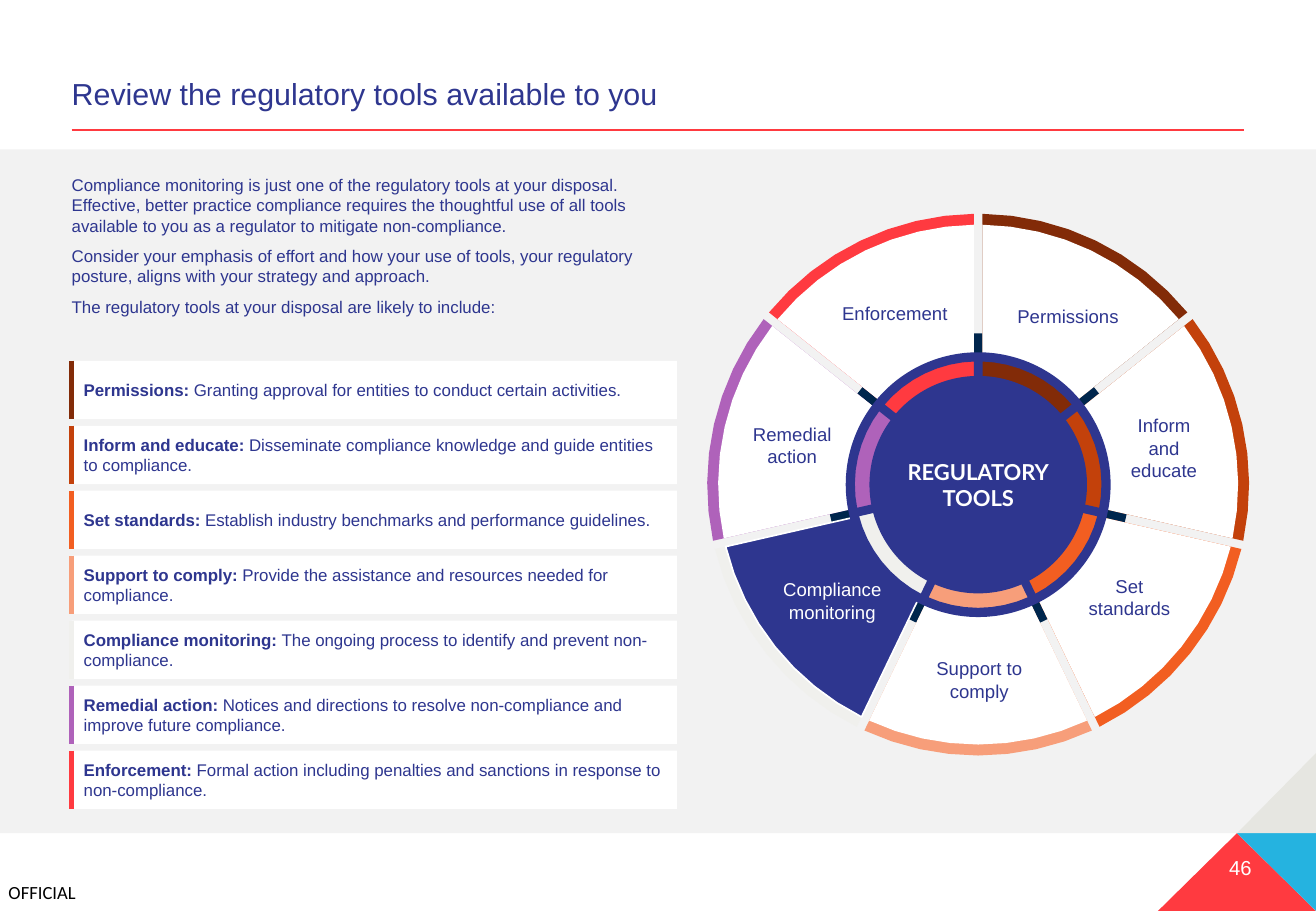
from dataclasses import dataclass
from math import asin, cos, pi, sin

from lxml.etree import SubElement
from pptx import Presentation
from pptx.dml.color import RGBColor
from pptx.enum.shapes import MSO_CONNECTOR, MSO_SHAPE
from pptx.enum.text import MSO_ANCHOR, PP_ALIGN
from pptx.oxml.ns import qn
from pptx.util import Inches, Pt


@dataclass(frozen=True)
class Theme:
    navy: str = "2E368F"
    midnight: str = "00264D"
    red: str = "FF3A40"
    sky: str = "25B3E0"
    stone: str = "E6E6E1"
    gray: str = "F2F2F2"
    white: str = "FFFFFF"
    black: str = "000000"
    brown: str = "822B08"
    rust: str = "C3410B"
    orange: str = "F25E21"
    peach: str = "F79E7A"
    ivory: str = "F0F0ED"
    purple: str = "AF62BA"
    body_font: str = "Arial"
    marking_font: str = "Calibri"
    hub_font: str = "Lato"
    title_size: float = 18
    body_size: float = 10
    label_size: float = 11
    number_size: float = 12
    hub_size: float = 13


theme = Theme()


def write(frame, text, lead="", size=theme.body_size, color=theme.navy,
          font=theme.body_font, bold=False, align=PP_ALIGN.LEFT,
          anchor=MSO_ANCHOR.TOP, margins=(0, 0.05), after=0, spacing=1.0):
    """Write one paragraph per line of text, the first with a bold lead."""
    frame.word_wrap = True
    frame.vertical_anchor = anchor
    frame.margin_left = frame.margin_right = Inches(margins[0])
    frame.margin_top = frame.margin_bottom = Inches(margins[1])
    for index, line in enumerate(text.split("\n")):
        para = frame.add_paragraph() if index else frame.paragraphs[0]
        para.alignment = align
        para.space_after = Pt(after)
        para.line_spacing = spacing
        parts = [(line, bold)]
        if lead and index == 0:
            parts.insert(0, (lead, True))
        for words, heavy in parts:
            span = para.add_run()
            span.text = words
            span.font.name = font
            span.font.size = Pt(size)
            span.font.bold = heavy
            span.font.color.rgb = RGBColor.from_string(color)


def paint(shape, fill, line=None, weight=1):
    """Give a shape a flat fill and an optional outline."""
    shape.shadow.inherit = False
    shape.fill.solid()
    shape.fill.fore_color.rgb = RGBColor.from_string(fill)
    if line:
        shape.line.color.rgb = RGBColor.from_string(line)
        shape.line.width = Pt(weight)
    else:
        shape.line.fill.background()


# Name, description, colour, wheel label, label box (left, top, width)
tools = [
    ("Permissions", "Granting approval for entities to conduct certain activities.",
     theme.brown, "Permissions", (8.24, 2.21, 1.1)),
    ("Inform and educate", "Disseminate compliance knowledge and guide entities to compliance.",
     theme.rust, "Inform and educate", (9.23, 3.29, 0.7)),
    ("Set standards", "Establish industry benchmarks and performance guidelines.",
     theme.orange, "Set\nstandards", (8.67, 4.52, 1.25)),
    ("Support to comply", "Provide the assistance and resources needed for compliance.",
     theme.peach, "Support to comply", (7.53, 5.2, 1.06)),
    ("Compliance monitoring", "The ongoing process to identify and prevent non-compliance.",
     theme.ivory, "Compliance monitoring", (6.32, 4.55, 1.06)),
    ("Remedial action",
     "Notices and directions to resolve non-compliance and improve future compliance.",
     theme.purple, "Remedial action", (6, 3.27, 1.04)),
    ("Enforcement",
     "Formal action including penalties and sanctions in response to non-compliance.",
     theme.red, "Enforcement", (6.88, 2.18, 0.97)),
]
highlighted = "Compliance monitoring"

deck = Presentation()
deck.slide_width, deck.slide_height = Inches(10.83), Inches(7.5)
page = deck.slides.add_slide(deck.slide_layouts[6])
shapes = page.shapes

# Background band and corner triangles
band = shapes.add_shape(MSO_SHAPE.RECTANGLE, 0, Inches(1.23), Inches(10.83), Inches(5.63))
paint(band, theme.gray)
triangles = [
    (theme.red, [(10.18, 6.86), (9.53, 7.5), (10.83, 7.5)]),
    (theme.sky, [(10.83, 6.86), (10.18, 6.86), (10.83, 7.5)]),
    (theme.stone, [(10.83, 6.2), (10.18, 6.86), (10.83, 6.86)]),
]
for color, corners in triangles:
    points = [(Inches(x), Inches(y)) for x, y in corners]
    builder = shapes.build_freeform(*points[0])
    builder.add_line_segments(points[1:])
    paint(builder.convert_to_shape(), color)

# Title, introduction, marking and page number
intro = "\n".join([
    "Compliance monitoring is just one of the regulatory tools at your disposal. "
    "Effective, better practice compliance requires the thoughtful use of all tools "
    "available to you as a regulator to mitigate non-compliance.",
    "Consider your emphasis of effort and how your use of tools, your regulatory "
    "posture, aligns with your strategy and approach.",
    "The regulatory tools at your disposal are likely to include:",
])
texts = [
    ((0.59, 0.59, 9.65, 0.38), "Review the regulatory tools available to you",
     dict(size=theme.title_size, anchor=MSO_ANCHOR.BOTTOM, spacing=0.9)),
    ((0.59, 1.39, 4.98, 1.55), intro, dict(after=6)),
    ((0.07, 7.25, 0.8, 0.18), "OFFICIAL",
     dict(size=theme.label_size, font=theme.marking_font, color=theme.black, margins=(0, 0))),
    ((9.43, 6.99, 0.87, 0.3), "46",
     dict(size=theme.number_size, color=theme.white, align=PP_ALIGN.RIGHT)),
]
for place, text, style in texts:
    box = shapes.add_textbox(*map(Inches, place))
    write(box.text_frame, text, **style)

# Tool cards
strokes = [((0.59, 1.07), (10.24, 1.07), theme.red, 1.25)]
for index, (name, description, color, _, _) in enumerate(tools):
    top = 2.97 + 0.535 * index
    card = shapes.add_shape(MSO_SHAPE.RECTANGLE, *map(Inches, (0.59, top, 4.98, 0.48)))
    paint(card, theme.white)
    write(card.text_frame, description, lead=f"{name}: ",
          anchor=MSO_ANCHOR.MIDDLE, margins=(0.1, 0.05))
    strokes.append(((0.59, top), (0.59, top + 0.48), color, 3))

# Title rule and card edges
for start, end, color, weight in strokes:
    stroke = shapes.add_connector(MSO_CONNECTOR.STRAIGHT, *map(Inches, start + end))
    stroke.line.color.rgb = RGBColor.from_string(color)
    stroke.line.width = Pt(weight)
    SubElement(stroke._element.spPr, qn("a:effectLst"))

# Wheel: each layer is a disc, then rings of sectors on top of it.
# The next disc covers the inner side of a sector, so that side is straight.
center_x, center_y = 8.05, 3.99
step = 2 * pi / len(tools)
arc_parts = 8
colors = [tool[2] for tool in tools]
faces = [theme.navy if tool[0] == highlighted else theme.white for tool in tools]
face_lines = [theme.white if tool[0] == highlighted else None for tool in tools]
outer_rings = [
    (2.23, 0.97, 0.035, colors, [None] * len(tools), 1),
    (2.14, 0.93, 0.035, faces, face_lines, 1),
]
inner_ring = (1.03, 0.44, 0.02, colors, [theme.navy] * len(tools), 2.25)
layers = [
    (1.245, theme.midnight, outer_rings),
    (1.09, theme.navy, [inner_ring]),
    (0.895, theme.navy, []),
]
for radius, disc_color, rings in layers:
    disc = shapes.add_shape(MSO_SHAPE.OVAL, Inches(center_x - radius), Inches(center_y - radius),
                            Inches(2 * radius), Inches(2 * radius))
    paint(disc, disc_color)
    for outer, inner, half_gap, fills, lines, weight in rings:
        for index, (fill, line) in enumerate(zip(fills, lines)):
            start = index * step - pi / 2
            end = start + step
            trim = asin(half_gap / outer)
            sweep = step - 2 * trim
            polar = [(outer, start + trim + sweep * k / arc_parts) for k in range(arc_parts + 1)]
            trim = asin(half_gap / inner)
            polar += [(inner, end - trim), (inner, start + trim)]
            points = [(Inches(center_x + reach * cos(angle)), Inches(center_y + reach * sin(angle)))
                      for reach, angle in polar]
            builder = shapes.build_freeform(*points[0])
            builder.add_line_segments(points[1:])
            paint(builder.convert_to_shape(), fill, line, weight)

# Wheel labels
centered = dict(align=PP_ALIGN.CENTER, anchor=MSO_ANCHOR.MIDDLE, margins=(0, 0))
write(disc.text_frame, "REGULATORY\nTOOLS", size=theme.hub_size, color=theme.white,
      font=theme.hub_font, bold=True, **centered)
for name, _, _, label, (left, top, width) in tools:
    box = shapes.add_textbox(*map(Inches, (left, top, width, 0.79)))
    write(box.text_frame, label, size=theme.label_size,
          color=theme.white if name == highlighted else theme.navy, **centered)

deck.save("out.pptx")
